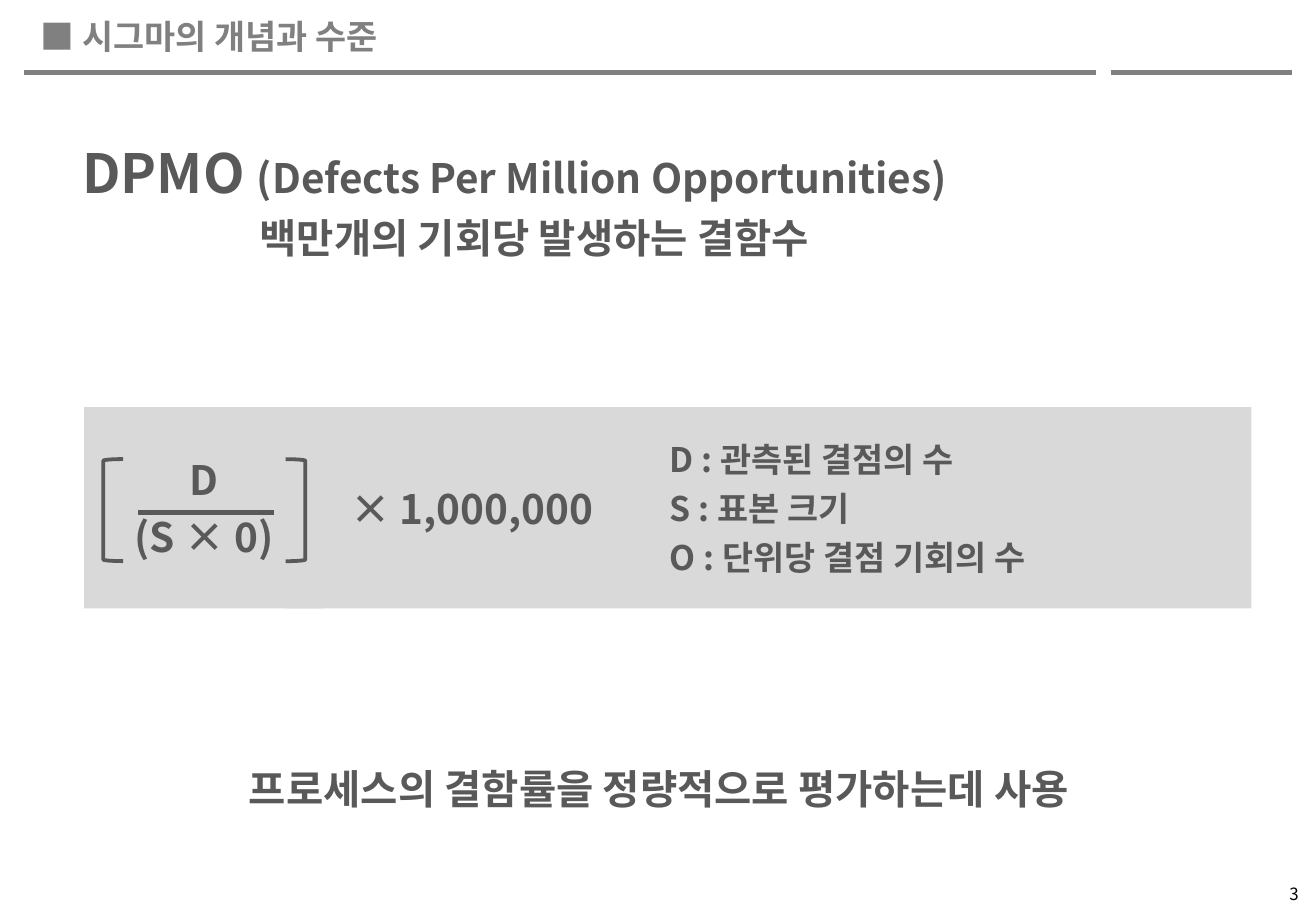
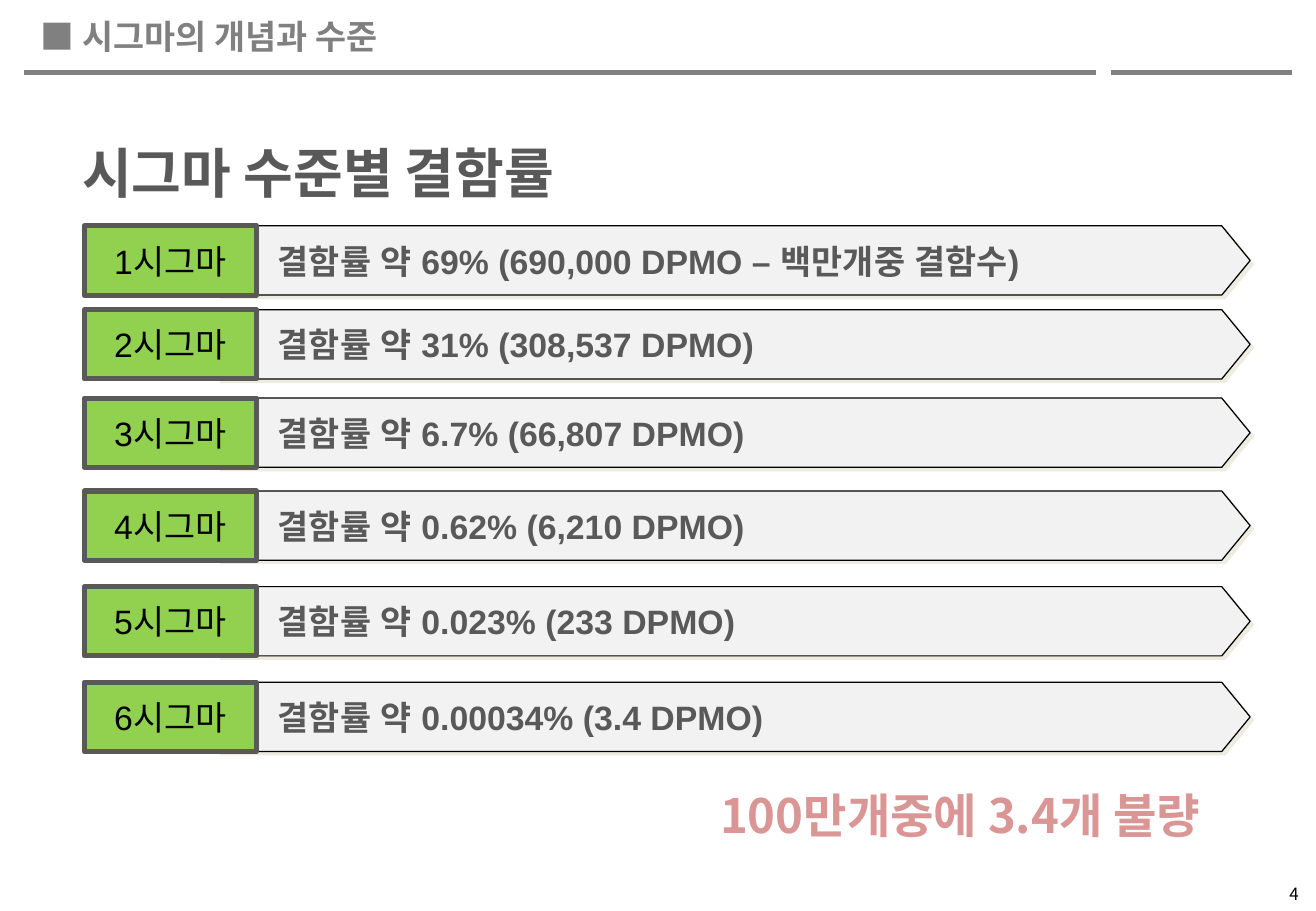
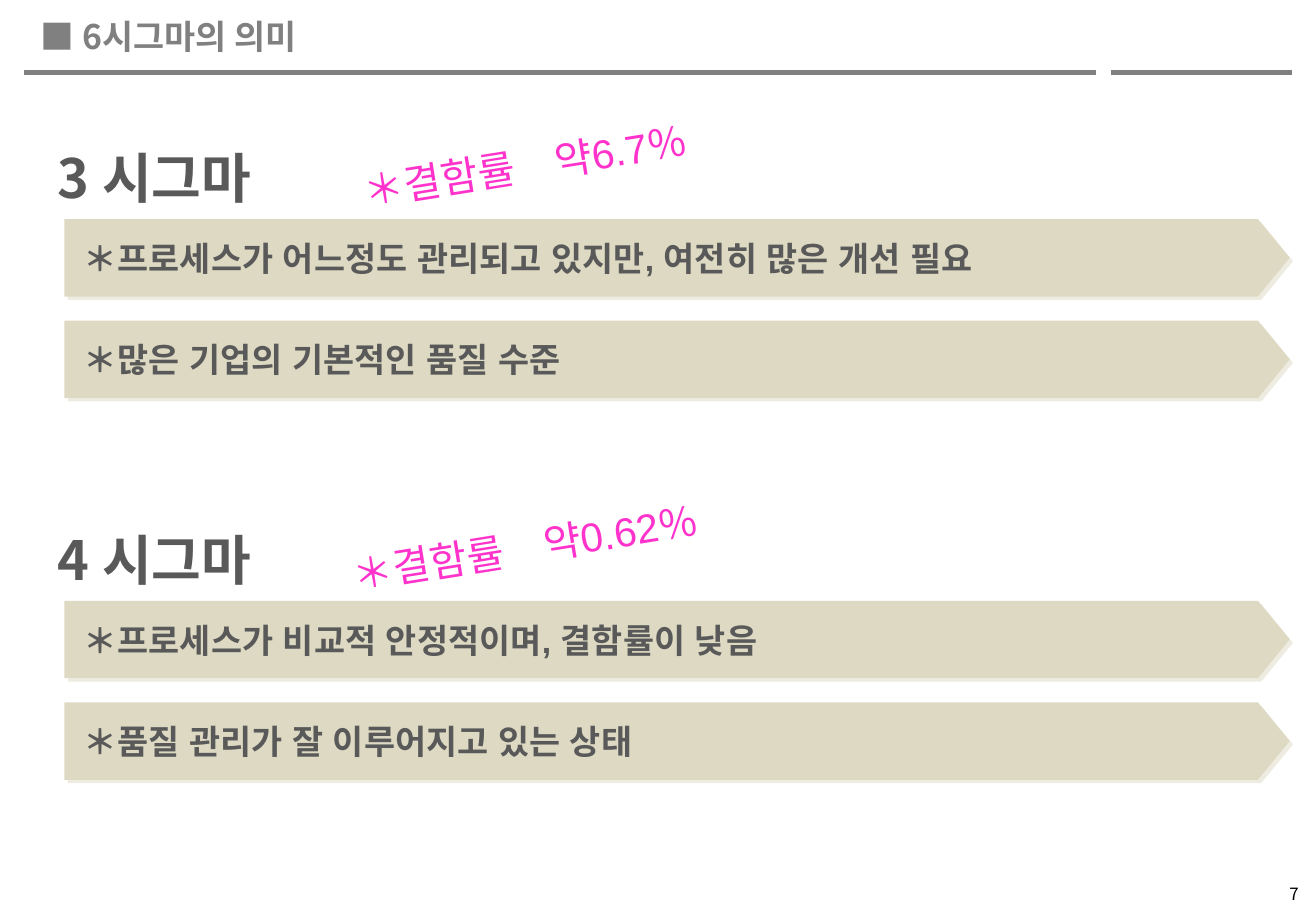
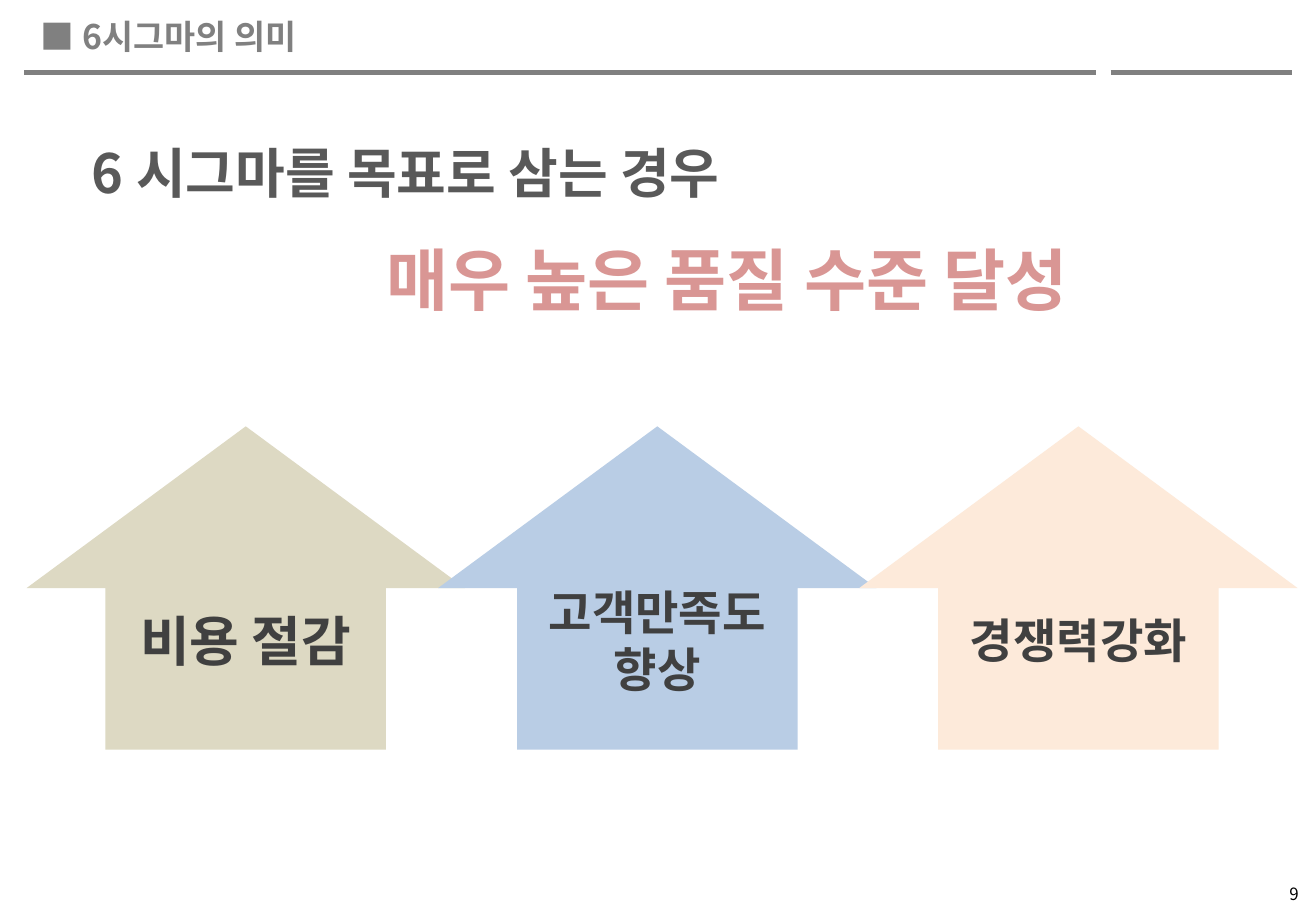
from dataclasses import dataclass, replace
from typing import NamedTuple

from lxml import etree
from pptx import Presentation
from pptx import util as u
from pptx.dml.color import RGBColor
from pptx.enum import shapes, text
from pptx.oxml import ns

# Shared look
GRAY = RGBColor(0x80, 0x80, 0x80)
DARK = RGBColor(0x59, 0x59, 0x59)
CHARCOAL = RGBColor(0x40, 0x40, 0x40)
BLACK = RGBColor(0, 0, 0)
PANEL = RGBColor(0xD9, 0xD9, 0xD9)
PALE = RGBColor(0xF2, 0xF2, 0xF2)
GREEN = RGBColor(0x92, 0xD0, 0x50)
ROSE = RGBColor(0xD9, 0x96, 0x94)
PINK = RGBColor(0xFF, 0x33, 0xCC)
SAND = RGBColor(0xDD, 0xD9, 0xC3)
SKY = RGBColor(0xB9, 0xCD, 0xE5)
PEACH = RGBColor(0xFD, 0xEA, 0xDA)
SHADOW = RGBColor(0xEE, 0xEC, 0xE1)
KR, JP, ARIAL = "Noto Sans CJK KR", "Noto Sans CJK JP", "Arial"
LEFT, CENTER, RIGHT = text.PP_ALIGN.LEFT, text.PP_ALIGN.CENTER, text.PP_ALIGN.RIGHT
TOP, MIDDLE = text.MSO_ANCHOR.TOP, text.MSO_ANCHOR.MIDDLE
SHAPE = shapes.MSO_SHAPE

prs = Presentation()
prs.slide_width, prs.slide_height = u.Inches(10.83), u.Inches(7.5)


class Box(NamedTuple):
    """Left, top, width and height in percent of the slide."""
    x: float
    y: float
    w: float
    h: float


@dataclass(frozen=True)
class Style:
    size: float
    color: RGBColor = DARK
    face: str = JP
    bold: bool = True


@dataclass(frozen=True)
class Para:
    runs: list[tuple[str, Style]]
    align: text.PP_ALIGN = LEFT
    indent: float = 0
    before: float = 5


@dataclass(frozen=True)
class Frame:
    anchor: text.MSO_ANCHOR = TOP
    wrap: bool = True
    grow: bool = False
    margins: tuple[float, float] = (0.1, 0.1)


BODY = Frame(grow=True)
PANEL_FRAME = Frame(MIDDLE)
LABEL_FRAME = Frame(MIDDLE, wrap=False, margins=(0.11, 0.11))
HEADING, FORMULA, LEGEND = Style(32), Style(24), Style(20)
ARROW_TEXT = Style(20, face=ARIAL)


def across(share: float) -> int:
    return round(prs.slide_width * share / 100)


def down(share: float) -> int:
    return round(prs.slide_height * share / 100)


def place(box: Box) -> tuple[int, int, int, int]:
    return across(box.x), down(box.y), across(box.w), down(box.h)


def line(content: str, style: Style, align=LEFT, indent: float = 0) -> Para:
    return Para([(content, style)], align, indent)


def write(shape, paras: list[Para], frame: Frame) -> None:
    tf = shape.text_frame
    left, right = frame.margins
    settings = {
        "word_wrap": frame.wrap, "vertical_anchor": frame.anchor,
        "auto_size": (text.MSO_AUTO_SIZE.SHAPE_TO_FIT_TEXT if frame.grow
                      else text.MSO_AUTO_SIZE.NONE),
        "margin_left": u.Inches(left), "margin_right": u.Inches(right),
        "margin_top": u.Inches(0.05), "margin_bottom": u.Inches(0.05),
    }
    for name, value in settings.items():
        setattr(tf, name, value)
    for i, para in enumerate(paras):
        p = tf.add_paragraph() if i else tf.paragraphs[0]
        p.alignment = para.align
        if i:
            p.space_before = u.Pt(para.before)
        if para.indent:
            pPr = p._p.get_or_add_pPr()
            pPr.set("marL", str(u.Inches(para.indent)))
            pPr.set("indent", "0")
        for content, style in para.runs:
            r = p.add_run()
            r.text = content
            font = {"size": u.Pt(style.size), "bold": style.bold, "name": style.face}
            for name, value in font.items():
                setattr(r.font, name, value)
            r.font.color.rgb = style.color
            ea = etree.SubElement(r._r.get_or_add_rPr(), ns.qn("a:ea"))
            ea.set("typeface", style.face)


def add_text(s, box: Box, paras: list[Para], frame: Frame = BODY, turn: float = 0) -> None:
    sp = s.shapes.add_textbox(*place(box))
    sp.rotation = turn
    write(sp, paras, frame)


def add_shape(s, kind, box: Box, fill=None, border=None, weight: float = 1,
              adjust=(), paras=(), frame: Frame = PANEL_FRAME):
    sp = s.shapes.add_shape(kind, *place(box))
    sp.shadow.inherit = False
    if fill is None:
        sp.fill.background()
    else:
        sp.fill.solid()
        sp.fill.fore_color.rgb = fill
    if border is None:
        sp.line.fill.background()
    else:
        sp.line.color.rgb = border
        sp.line.width = u.Pt(weight)
    for i, value in enumerate(adjust):
        sp.adjustments[i] = value
    if paras:
        write(sp, paras, frame)
    return sp


def add_arrow_bar(s, box: Box, content: str, fill: RGBColor, margin: float,
                  border=None) -> None:
    """Full-height right arrow with a hard offset shadow."""
    sp = add_shape(s, SHAPE.RIGHT_ARROW, box, fill, border, 0.75, (1, 0.41),
                   [line(content, ARROW_TEXT)], replace(LABEL_FRAME, margins=(margin, 0.11)))
    effects = sp._element.spPr.find(ns.qn("a:effectLst"))
    shadow = etree.SubElement(effects, ns.qn("a:outerShdw"), blurRad="0",
                              dist=str(u.Pt(2.8)), dir="2700000", algn="ctr", rotWithShape="0")
    etree.SubElement(shadow, ns.qn("a:srgbClr"), val=str(SHADOW))


def add_rule(s, x1: float, x2: float, y: float, color: RGBColor) -> None:
    c = s.shapes.add_connector(shapes.MSO_CONNECTOR.STRAIGHT,
                               across(x1), down(y), across(x2), down(y))
    c.line.color.rgb = color
    c.line.width = u.Pt(3)
    etree.SubElement(c._element.spPr, ns.qn("a:effectLst"))


def add_page(title: str, number: int):
    """Blank slide with the header rules, page number and title."""
    s = prs.slides.add_slide(prs.slide_layouts[6])
    for x1, x2 in ((1.85, 83.3), (84.4, 98.15)):
        add_rule(s, x1, x2, 8, GRAY)
    add_text(s, Box(90.8, 96.1, 8.8, 4),
             [line(str(number), Style(10, BLACK, KR, False), RIGHT)], PANEL_FRAME)
    add_text(s, Box(2.2, 1.1, 75.4, 5.9), [line(f"■ {title}", Style(20, GRAY, KR))])
    return s


def build_dpmo() -> None:
    s = add_page("시그마의 개념과 수준", 3)
    add_text(s, Box(3.5, 14.7, 93.1, 14.8), [
        Para([("DPMO ", HEADING), ("(Defects Per Million Opportunities)", FORMULA)], indent=0.2),
        line("백만개의 기회당 발생하는 결함수", FORMULA, indent=1.66)])
    add_text(s, Box(3.5, 83.2, 93.1, 6.7),
             [line("프로세스의 결함률을 정량적으로 평가하는데 사용", FORMULA, CENTER)])

    # Formula panel: factor, fraction and legend side by side
    panels = (
        (21.7, 28.3, FORMULA, CENTER, ["× 1,000,000"]),
        (6.4, 18.2, FORMULA, CENTER, ["D", "(S × 0)"]),
        (50, 45.1, LEGEND, LEFT,
         ["D : 관측된 결점의 수", "S : 표본 크기", "O : 단위당 결점 기회의 수"]),
    )
    for x, w, style, align, lines in panels:
        add_shape(s, SHAPE.RECTANGLE, Box(x, 44.7, w, 22.1), PANEL,
                  paras=[line(content, style, align) for content in lines])
    add_rule(s, 10.5, 20.8, 56.3, DARK)
    for x, turn in ((7.85, 0), (21.7, 180)):
        bracket = add_shape(s, SHAPE.LEFT_BRACKET, Box(x, 50.4, 1.5, 11.2),
                            border=DARK, weight=2.25)
        bracket.rotation = turn


def build_levels() -> None:
    s = add_page("시그마의 개념과 수준", 4)
    add_text(s, Box(3.5, 14.7, 93.1, 8.5), [line("시그마 수준별 결함률", HEADING, indent=0.2)])
    add_text(s, Box(49.3, 85.7, 47.3, 7.6),
             [line("100만개중에 3.4개 불량", Style(28, ROSE), CENTER)])
    levels = (
        (24.8, "69% (690,000 DPMO – 백만개중 결함수)"),
        (34, "31% (308,537 DPMO)"),
        (43.7, "6.7% (66,807 DPMO)"),
        (53.9, "0.62% (6,210 DPMO)"),
        (64.4, "0.023% (233 DPMO)"),
        (74.9, "0.00034% (3.4 DPMO)"),
    )
    for level, (y, rate) in enumerate(levels, 1):
        add_arrow_bar(s, Box(16.5, y, 78.5, 7.6), f"결함률 약 {rate}", PALE, 0.5, BLACK)
        add_shape(s, SHAPE.RECTANGLE, Box(6.4, y, 13.1, 7.6), GREEN, DARK, 3,
                  paras=[line(f"{level}시그마", Style(20, BLACK, ARIAL, False), CENTER)],
                  frame=LABEL_FRAME)


def build_meaning() -> None:
    s = add_page("6시그마의 의미", 7)
    sections = (
        (15.2, "3 시그마", "6.7",
         ["프로세스가 어느정도 관리되고 있지만, 여전히 많은 개선 필요",
          "많은 기업의 기본적인 품질 수준"]),
        (57.1, "4 시그마", "0.62",
         ["프로세스가 비교적 안정적이며, 결함률이 낮음",
          "품질 관리가 잘 이루어지고 있는 상태"]),
    )
    for y, heading, rate, points in sections:
        add_text(s, Box(3.5, y, 93.1, 8.5), [line(heading, HEADING)])
        for i, point in enumerate(points):
            add_arrow_bar(s, Box(4.9, y + 8.85 + 11.15 * i, 93.1, 8.5), f"＊{point}", SAND, 0.16)
        add_text(s, Box(26.4, y + 0.1, 27.1, 5.6),
                 [line(f"＊결함률　약{rate}％", Style(24, PINK, ARIAL, False), CENTER)],
                 LABEL_FRAME, turn=350.9)


def build_goal() -> None:
    s = add_page("6시그마의 의미", 9)
    add_text(s, Box(3.5, 14.7, 93.1, 21.2), [
        line("6 시그마를 목표로 삼는 경우", HEADING, indent=0.28),
        Para([("매우 높은 품질 수준 달성", Style(40, ROSE))], indent=2.7, before=20)])
    benefits = (
        (2.03, SAND, 32, ["비용 절감"]),
        (33.3, SKY, 28, ["고객만족도", "향상"]),
        (65.3, PEACH, 28, ["경쟁력강화"]),
    )
    for x, fill, size, lines in benefits:
        style = Style(size, CHARCOAL, KR)
        add_shape(s, SHAPE.UP_ARROW, Box(x, 46.8, 33.3, 35.5), fill, adjust=(0.64, 0.5),
                  paras=[Para([(content, style)], CENTER, before=0) for content in lines])


def main() -> None:
    for build in (build_dpmo, build_levels, build_meaning, build_goal):
        build()
    prs.save("out.pptx")


if __name__ == "__main__":
    main()
